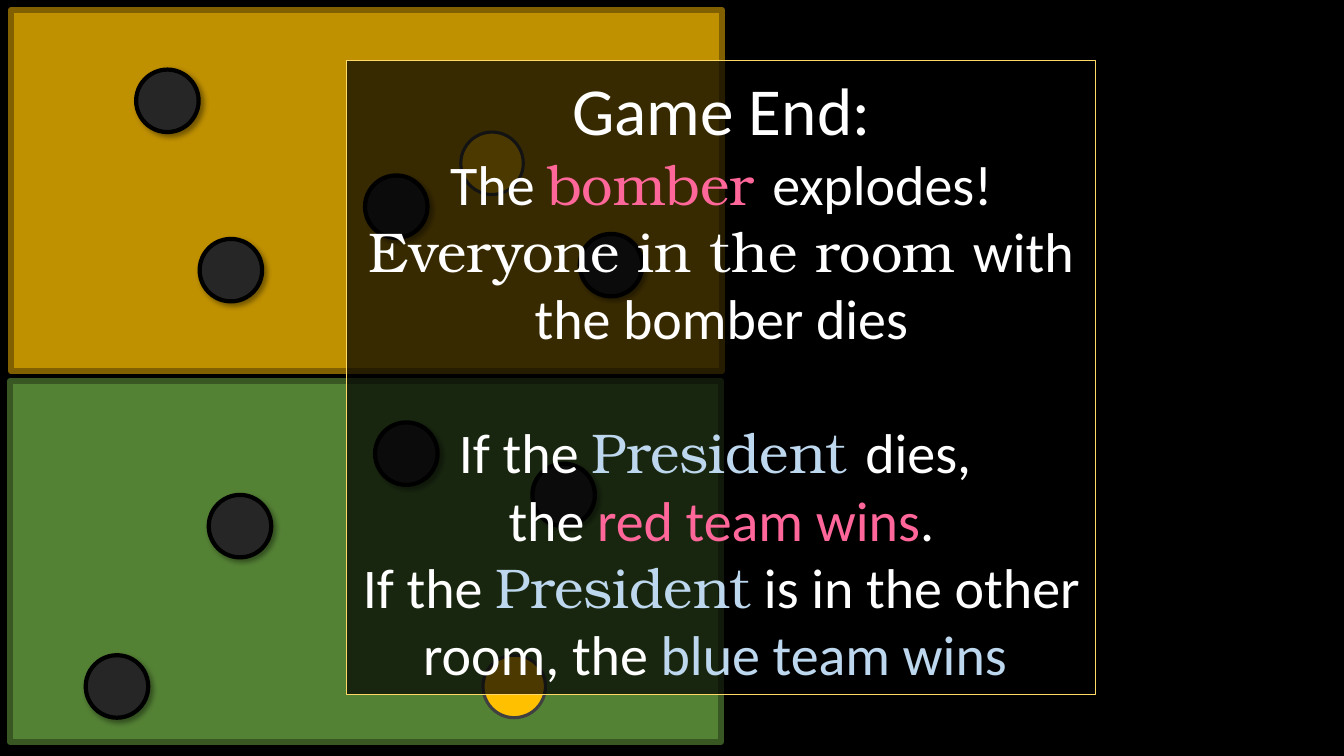
from dataclasses import dataclass

from lxml import etree
from pptx import Presentation
from pptx import util as u
from pptx.dml.color import RGBColor
from pptx.enum import shapes, text
from pptx.oxml import ns

BODY_FONT = "Calibri"
ACCENT_FONT = "TeX Gyre Bonum"
WHITE, BLACK, PINK, BLUE = "FFFFFF", "000000", "FF6699", "BDD7EE"
TOKEN_SIZE = 0.62


@dataclass(frozen=True)
class Room:
    left: float
    top: float
    fill: str
    line: str


@dataclass(frozen=True)
class Token:
    left: float
    top: float
    highlighted: bool = False


@dataclass(frozen=True)
class Span:
    words: str
    color: str = WHITE
    font: str = BODY_FONT
    break_after: bool = False


@dataclass(frozen=True)
class Line:
    spans: tuple[Span, ...]
    size: float = 40
    space_before: float = 0


ROOMS = (
    Room(0.1, 3.78, "548235", "385723"),
    Room(0.11, 0.1, "BF9000", "806000"),
)

TOKENS = (
    Token(5.75, 2.32),
    Token(5.28, 4.6),
    Token(1.35, 0.69),
    Token(0.85, 6.5),
    Token(4.57, 1.31, highlighted=True),
    Token(4.79, 6.5, highlighted=True),
    Token(3.72, 4.19),
    Token(3.62, 1.74),
    Token(1.98, 2.37),
    Token(2.07, 4.91),
)

LINES = (
    Line((Span("Game End:"),), size=48),
    Line((Span("The "), Span("bomber ", PINK, ACCENT_FONT), Span("explodes!"))),
    Line((Span("Everyone in the room ", font=ACCENT_FONT), Span("with the bomber dies"))),
    Line(
        (
            Span("If the "),
            Span("President ", BLUE, ACCENT_FONT),
            Span("dies, ", break_after=True),
            Span("the "),
            Span("red team wins", PINK),
            Span("."),
        ),
        space_before=48,
    ),
    Line(
        (
            Span("If the "),
            Span("President", BLUE, ACCENT_FONT),
            Span(" is in the other room, the "),
            Span("blue team wins ", BLUE),
        )
    ),
)


def rgb(value: str) -> RGBColor:
    return RGBColor.from_string(value)


def add_filled_shape(slide, kind, left: float, top: float, width: float, height: float,
                     fill: str, line: str, line_width: float):
    shape = slide.shapes.add_shape(
        kind, u.Inches(left), u.Inches(top), u.Inches(width), u.Inches(height)
    )
    shape.shadow.inherit = False
    shape.fill.solid()
    shape.fill.fore_color.rgb = rgb(fill)
    shape.line.color.rgb = rgb(line)
    shape.line.width = u.Pt(line_width)
    return shape


def add_alpha(color_element, percent: int) -> None:
    etree.SubElement(color_element, ns.qn("a:alpha"), val=str(percent * 1000))


def add_drop_shadow(shape) -> None:
    effects = shape.element.spPr.find(ns.qn("a:effectLst"))
    shadow = etree.SubElement(
        effects, ns.qn("a:outerShdw"), blurRad=str(u.Pt(4)), dist=str(u.Pt(3)),
        dir=str(45 * 60000), algn="tl", rotWithShape="0",
    )
    add_alpha(etree.SubElement(shadow, ns.qn("a:srgbClr"), val=BLACK), 40)


def add_room(slide, room: Room) -> None:
    add_filled_shape(slide, shapes.MSO_SHAPE.RECTANGLE, room.left, room.top,
                     7.05, 3.58, room.fill, room.line, 4.5)


def add_token(slide, token: Token) -> None:
    fill, line, line_width = ("FFC000", "404040", 2.25) if token.highlighted else ("262626", BLACK, 3)
    shape = add_filled_shape(slide, shapes.MSO_SHAPE.OVAL, token.left, token.top,
                             TOKEN_SIZE, TOKEN_SIZE, fill, line, line_width)
    if not token.highlighted:
        add_drop_shadow(shape)


def add_run(paragraph, words: str, *, size: float, color: str, font: str) -> None:
    run = paragraph.add_run()
    run.text = words
    run.font.size = u.Pt(size)
    run.font.name = font
    run.font.color.rgb = rgb(color)


def add_rules_panel(slide, lines: tuple[Line, ...]) -> None:
    panel = add_filled_shape(slide, shapes.MSO_SHAPE.RECTANGLE, 3.44, 0.6,
                             7.43, 6.29, BLACK, "FFD966", 0.75)
    add_alpha(panel.element.spPr.find(ns.qn("a:solidFill"))[0], 70)
    frame = panel.text_frame
    frame.word_wrap = True
    frame.auto_size = text.MSO_AUTO_SIZE.SHAPE_TO_FIT_TEXT
    frame.vertical_anchor = text.MSO_ANCHOR.MIDDLE
    for index, line in enumerate(lines):
        paragraph = frame.add_paragraph() if index else frame.paragraphs[0]
        paragraph.alignment = text.PP_ALIGN.CENTER
        if line.space_before:
            paragraph.space_before = u.Pt(line.space_before)
        for span in line.spans:
            add_run(paragraph, span.words, size=line.size, color=span.color, font=span.font)
            if span.break_after:
                paragraph.add_line_break()


def main() -> None:
    presentation = Presentation()
    presentation.slide_width = u.Inches(13.33)
    presentation.slide_height = u.Inches(7.5)
    slide = presentation.slides.add_slide(presentation.slide_layouts.get_by_name("Blank"))
    slide.background.fill.solid()
    slide.background.fill.fore_color.rgb = rgb(BLACK)
    for room in ROOMS:
        add_room(slide, room)
    for token in TOKENS:
        add_token(slide, token)
    add_rules_panel(slide, LINES)
    presentation.save("out.pptx")


if __name__ == "__main__":
    main()
